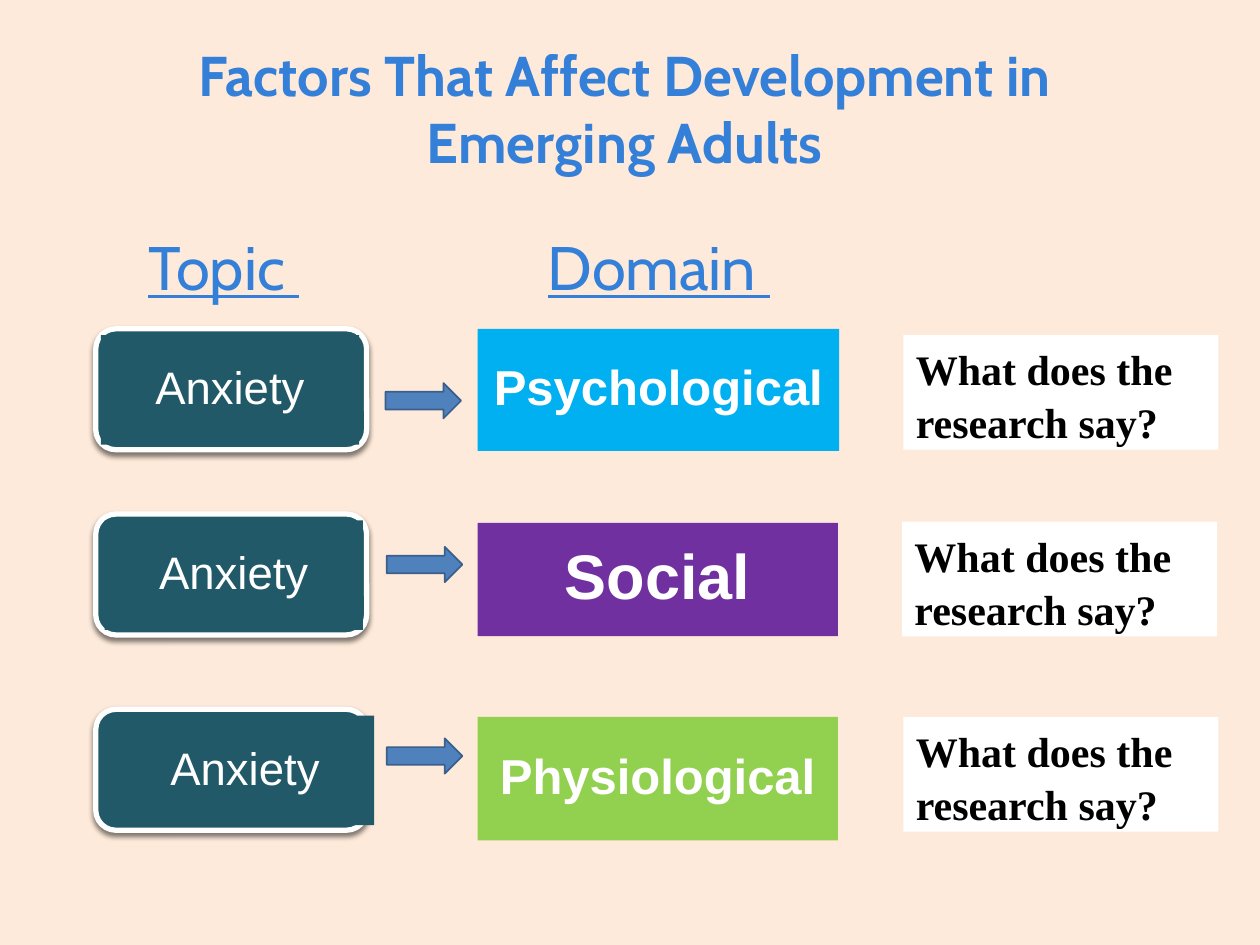
"""Build the slide on factors that affect development in emerging adults."""
from dataclasses import dataclass

from lxml import etree
from pptx import Presentation
from pptx.dml.color import RGBColor
from pptx.enum.shapes import MSO_SHAPE
from pptx.enum.text import MSO_ANCHOR, PP_ALIGN
from pptx.oxml import parse_xml
from pptx.oxml.ns import nsdecls
from pptx.shapes.autoshape import Shape
from pptx.slide import Slide
from pptx.util import Emu, Pt

PX = 9144

PEACH = RGBColor(0xFD, 0xEA, 0xDA)
HEADING_BLUE = RGBColor(0x34, 0x7F, 0xD8)
TEAL = RGBColor(0x21, 0x59, 0x68)
ARROW_BLUE = RGBColor(0x4F, 0x81, 0xBD)
ARROW_EDGE = RGBColor(0x3A, 0x5F, 0x8C)
SKY = RGBColor(0x00, 0xB0, 0xF0)
PURPLE = RGBColor(0x70, 0x30, 0xA0)
GREEN = RGBColor(0x92, 0xD0, 0x50)
WHITE = RGBColor(0xFF, 0xFF, 0xFF)
BLACK = RGBColor(0x00, 0x00, 0x00)


@dataclass(frozen=True)
class Box:
    left: int
    top: int
    width: int
    height: int

    def emu(self) -> tuple[Emu, ...]:
        return tuple(Emu(n * PX) for n in (self.left, self.top, self.width, self.height))


@dataclass(frozen=True)
class Factor:
    domain: str
    size: int
    color: RGBColor
    domain_box: Box
    frame_top: int
    topic_left: int
    arrow: tuple[int, int]
    question: tuple[int, int]


FACTORS = (
    Factor("Psychological", 28, SKY, Box(379, 261, 287, 97), 261, 80, (306, 304), (717, 266)),
    Factor("Social", 36, PURPLE, Box(379, 415, 286, 90), 408, 83, (307, 434), (716, 414)),
    Factor("Physiological", 28, GREEN, Box(379, 569, 286, 98), 563, 92, (307, 586), (717, 569)),
)


def write(shape: Shape, text: str, *, size: float, font: str, color: RGBColor,
          bold: bool = False, underline: bool = False,
          align: PP_ALIGN = PP_ALIGN.LEFT, anchor: MSO_ANCHOR = MSO_ANCHOR.MIDDLE,
          spacing: float = 1.0, insets: tuple[int, int, int, int] = (10, 5, 10, 5)) -> None:
    frame = shape.text_frame
    frame.word_wrap = True
    frame.vertical_anchor = anchor
    (frame.margin_left, frame.margin_top,
     frame.margin_right, frame.margin_bottom) = (Emu(n * PX) for n in insets)
    paragraph = frame.paragraphs[0]
    paragraph.text = text
    paragraph.alignment = align
    paragraph.line_spacing = spacing
    for run in paragraph.runs:
        run.font.size = Pt(size)
        run.font.name = font
        run.font.bold = bold
        run.font.underline = underline
        run.font.color.rgb = color


def draw(slide: Slide, kind: MSO_SHAPE, box: Box, fill: RGBColor,
         edge: RGBColor | None = None, weight: int = 1) -> Shape:
    shape = slide.shapes.add_shape(kind, *box.emu())
    shape.shadow.inherit = False
    shape.fill.solid()
    shape.fill.fore_color.rgb = fill
    if edge is None:
        shape.line.fill.background()
    else:
        shape.line.color.rgb = edge
        shape.line.width = Pt(weight)
    return shape


def drop_shadow(shape: Shape) -> None:
    effects = shape.element.spPr.find("{*}effectLst")
    shadow = parse_xml(
        f'<a:outerShdw {nsdecls("a")} blurRad="{Pt(3)}" dist="{Pt(2)}" dir="5400000" '
        'rotWithShape="0"><a:srgbClr val="000000"><a:alpha val="50000"/></a:srgbClr>'
        '</a:outerShdw>')
    etree.ElementBase.append(effects, shadow)


def draw_heading(slide: Slide, text: str, box: Box, size: float, **style) -> None:
    heading = slide.shapes.add_textbox(*box.emu())
    write(heading, text, size=size, font="Cabin", color=HEADING_BLUE,
          anchor=MSO_ANCHOR.BOTTOM, insets=(10, 5, 10, 10), **style)


def draw_factor(slide: Slide, factor: Factor) -> None:
    domain = draw(slide, MSO_SHAPE.RECTANGLE, factor.domain_box, factor.color)
    write(domain, factor.domain, size=factor.size, font="Arial", color=WHITE, bold=True,
          align=PP_ALIGN.CENTER, spacing=0.9, insets=(6, 3, 6, 3))

    frame = draw(slide, MSO_SHAPE.ROUNDED_RECTANGLE, Box(76, factor.frame_top, 215, 96),
                 TEAL, WHITE, 3)
    drop_shadow(frame)
    topic = draw(slide, MSO_SHAPE.RECTANGLE,
                 Box(factor.topic_left, factor.frame_top + 5, 205, 87), TEAL)
    write(topic, "Anxiety", size=26, font="Arial", color=WHITE,
          align=PP_ALIGN.CENTER, spacing=0.9, insets=(11, 5, 11, 5))

    draw(slide, MSO_SHAPE.RIGHT_ARROW, Box(*factor.arrow, 60, 28), ARROW_BLUE, ARROW_EDGE)

    question = draw(slide, MSO_SHAPE.RECTANGLE, Box(*factor.question, 250, 91), WHITE)
    write(question, "What does the research say?", size=24, font="Times New Roman",
          color=BLACK, bold=True, anchor=MSO_ANCHOR.TOP, spacing=1.05)


def main() -> None:
    deck = Presentation()
    deck.slide_width, deck.slide_height = Emu(1000 * PX), Emu(750 * PX)
    slide = deck.slides.add_slide(deck.slide_layouts[6])
    slide.background.fill.solid()
    slide.background.fill.fore_color.rgb = PEACH

    draw_heading(slide, "Factors That Affect Development in\vEmerging Adults",
                 Box(71, 24, 850, 125), 32, bold=True, align=PP_ALIGN.CENTER)
    for text, left in (("Topic ", 108), ("Domain ", 425)):
        draw_heading(slide, text, Box(left, 125, 200, 125), 35.1, underline=True)
    for factor in FACTORS:
        draw_factor(slide, factor)
    deck.save("out.pptx")


if __name__ == "__main__":
    main()
